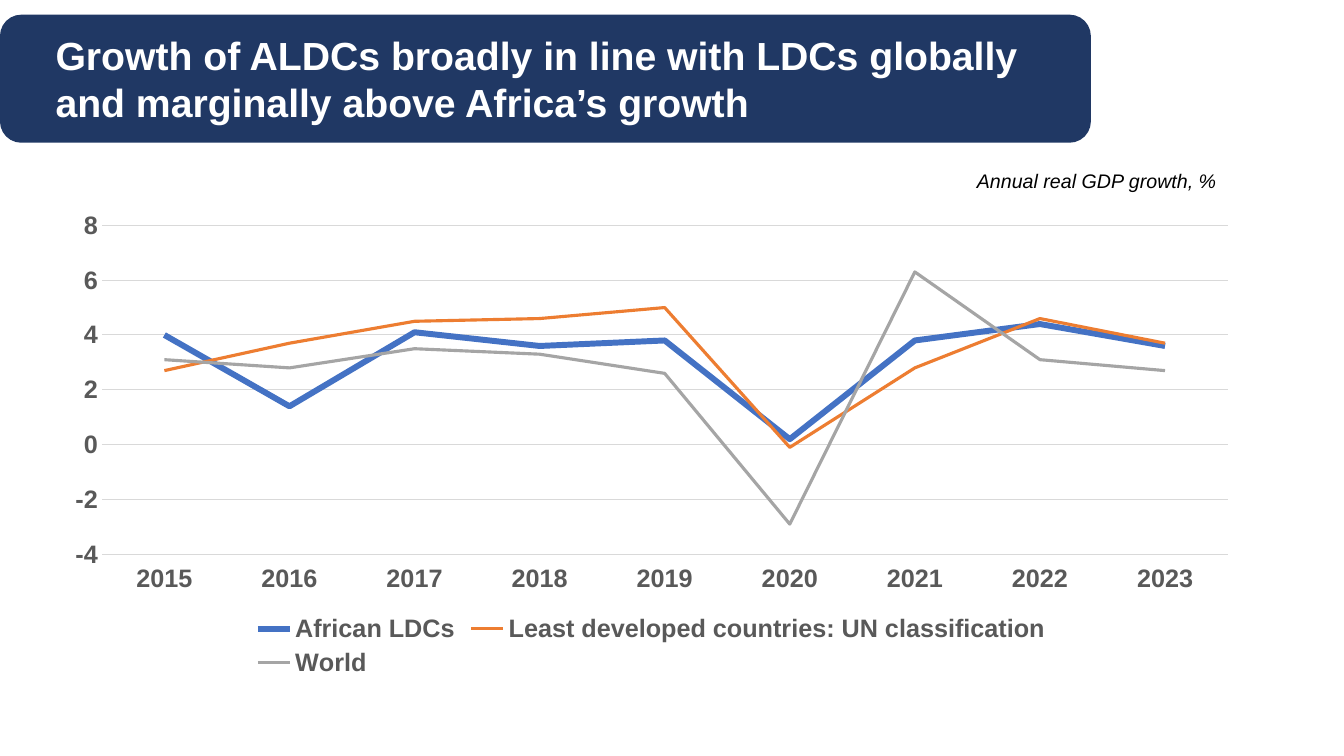
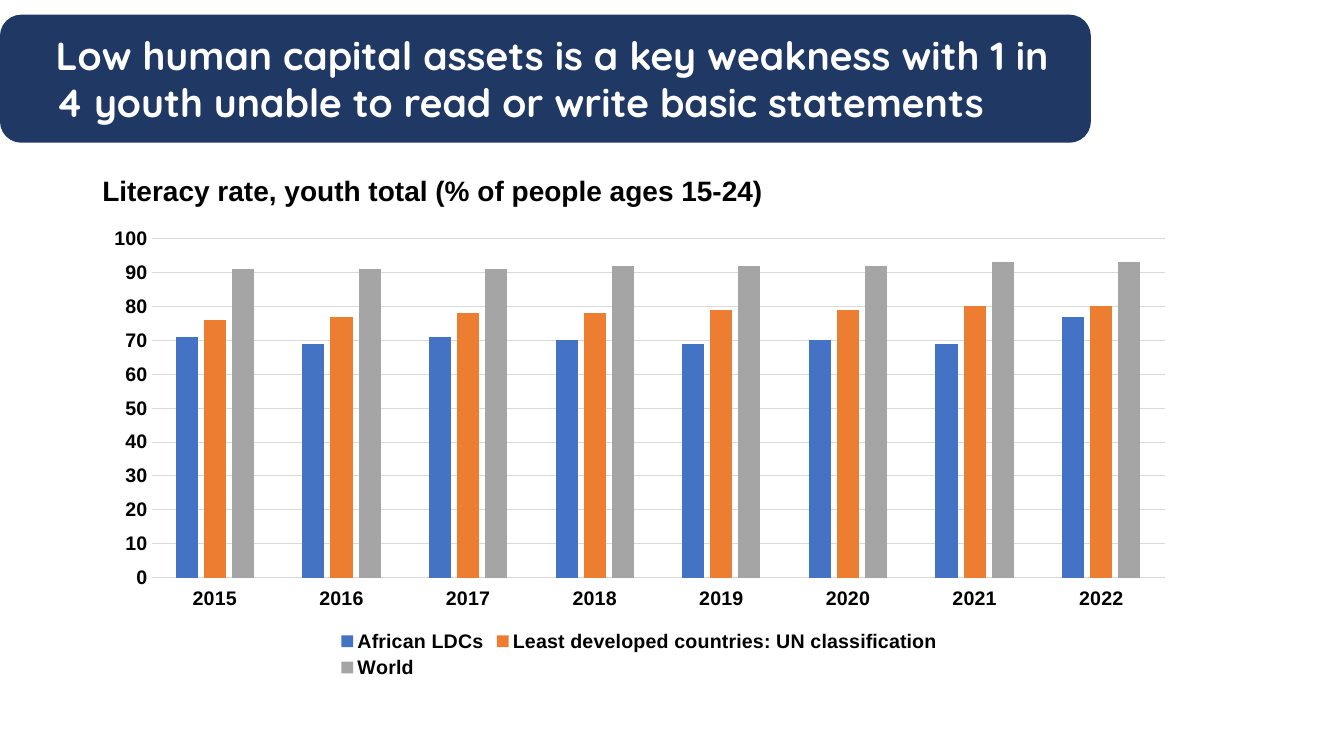
from dataclasses import dataclass

from pptx import Presentation
from pptx.chart.data import CategoryChartData
from pptx.dml.color import RGBColor
from pptx.enum.chart import XL_CHART_TYPE as ChartType
from pptx.enum.chart import XL_LEGEND_POSITION as LegendPosition
from pptx.enum.chart import XL_TICK_LABEL_POSITION as LabelPosition
from pptx.enum.chart import XL_TICK_MARK as TickMark
from pptx.enum.shapes import MSO_SHAPE as Shape
from pptx.enum.text import MSO_ANCHOR as Anchor
from pptx.enum.text import PP_ALIGN as Align
from pptx.util import Emu, Pt


@dataclass(frozen=True)
class Theme:
    navy: str = "203864"
    white: str = "FFFFFF"
    black: str = "000000"
    gray: str = "595959"
    grid: str = "D9D9D9"
    series: tuple = ("4472C4", "ED7D31", "A5A5A5")
    font: str = "Arial"
    accent_font: str = "Quicksand"
    title_size: int = 28
    heading_size: int = 20
    large_size: int = 18
    small_size: int = 14


THEME = Theme()
EMU_PER_PX = 9525
SLIDE_SIZE = (1280, 720)
BAND = (0, 14, 1039, 122)
GROUPS = ("African LDCs", "Least developed countries: UN classification", "World")


# Shared helpers
def px(*lengths):
    return [Emu(length * EMU_PER_PX) for length in lengths]


def color(code):
    return RGBColor.from_string(code)


def style_font(font, size, code, name=THEME.font, bold=False, italic=False):
    font.name, font.size = name, Pt(size)
    font.bold, font.italic = bold, italic
    font.color.rgb = color(code)


def write(frame, text, size, code, spacing=None, **style):
    frame.word_wrap = True
    para = frame.paragraphs[0]
    para.alignment = Align.LEFT
    para.line_spacing = spacing
    span = para.add_run()
    span.text = text
    style_font(span.font, size, code, **style)
    return para


# Text elements
def add_title_band(page, text, font=THEME.font):
    band = page.shapes.add_shape(Shape.ROUNDED_RECTANGLE, *px(*BAND))
    band.shadow.inherit = False
    band.fill.solid()
    band.fill.fore_color.rgb = color(THEME.navy)
    band.line.fill.background()
    frame = band.text_frame
    frame.vertical_anchor = Anchor.MIDDLE
    frame.margin_left, frame.margin_right, frame.margin_top, frame.margin_bottom = px(10, 10, 10, 10)
    para = write(frame, text, THEME.title_size, THEME.white, name=font, bold=True)
    # Both lines are indented from the edge of the band
    properties = para._p.get_or_add_pPr()
    properties.set("marL", str(px(37)[0]))
    properties.set("indent", "0")


def add_label(page, area, text, size, **style):
    box = page.shapes.add_textbox(*px(*area))
    write(box.text_frame, text, size, THEME.black, **style)


# Charts
def add_growth_axes(chart, scale, size, text_color):
    low, high, step = scale
    category, value = chart.category_axis, chart.value_axis
    value.minimum_scale, value.maximum_scale, value.major_unit = low, high, step
    value.has_major_gridlines = True
    value.format.line.fill.background()
    for line in (category.format.line, value.major_gridlines.format.line):
        line.color.rgb = color(THEME.grid)
        line.width = Pt(0.75)
    for axis in (category, value):
        axis.major_tick_mark = axis.minor_tick_mark = TickMark.NONE
        style_font(axis.tick_labels.font, size, text_color, bold=True)
    category.tick_label_position = LabelPosition.LOW


def add_group_chart(page, kind, area, years, values, scale, size, text_color, number_format="General"):
    data = CategoryChartData(number_format=number_format)
    data.categories = [str(year) for year in years]
    for group, numbers in zip(GROUPS, values):
        data.add_series(group, numbers)
    chart = page.shapes.add_chart(kind, *px(*area), data).chart
    chart.has_title = False
    style_font(chart.font, size, THEME.black, bold=True)
    add_growth_axes(chart, scale, size, text_color)
    chart.has_legend = True
    chart.legend.position = LegendPosition.BOTTOM
    chart.legend.include_in_layout = False
    style_font(chart.legend.font, size, text_color, bold=True)
    chart.plots[0].vary_by_categories = False
    return chart


def style_lines(chart, widths):
    for series, code, width in zip(chart.plots[0].series, THEME.series, widths):
        series.smooth = False
        series.format.line.color.rgb = color(code)
        series.format.line.width = Pt(width)


def style_columns(chart, gap, overlap):
    plot = chart.plots[0]
    plot.gap_width, plot.overlap = gap, overlap
    for series, code in zip(plot.series, THEME.series):
        series.format.fill.solid()
        series.format.fill.fore_color.rgb = color(code)


# Slides
def build_growth(page):
    add_title_band(page, "Growth of ALDCs broadly in line with LDCs globally and marginally above Africa’s growth")
    values = (
        (4, 1.4, 4.1, 3.6, 3.8, 0.2, 3.8, 4.4, 3.6),
        (2.7, 3.7, 4.5, 4.6, 5, -0.1, 2.8, 4.6, 3.7),
        (3.1, 2.8, 3.5, 3.3, 2.6, -2.9, 6.3, 3.1, 2.7),
    )
    chart = add_group_chart(page, ChartType.LINE, (49, 192, 1143, 457), range(2015, 2024), values,
                            scale=(-4, 8, 2), size=THEME.large_size, text_color=THEME.gray)
    style_lines(chart, widths=(4.25, 2.25, 2.25))
    add_label(page, (921, 156, 257, 33), "Annual real GDP growth, %", THEME.small_size, italic=True)


def build_literacy(page):
    add_title_band(page, "Low human capital assets is a key weakness with 1 in 4 youth unable to read or write "
                         "basic statements", font=THEME.accent_font)
    add_label(page, (88, 164, 811, 44), "Literacy rate, youth total (% of people ages 15-24)",
              THEME.heading_size, bold=True, spacing=0.9)
    values = (
        (71, 69, 71, 70, 69, 70, 69, 77),
        (76, 77, 78, 78, 79, 79, 80, 80),
        (91, 91, 91, 92, 92, 92, 93, 93),
    )
    chart = add_group_chart(page, ChartType.COLUMN_CLUSTERED, (88, 208, 1042, 442), range(2015, 2023), values,
                            scale=(0, 100, 10), size=THEME.small_size, text_color=THEME.black,
                            number_format="0")
    style_columns(chart, gap=219, overlap=-27)


def main():
    deck = Presentation()
    deck.slide_width, deck.slide_height = px(*SLIDE_SIZE)
    for build in (build_growth, build_literacy):
        build(deck.slides.add_slide(deck.slide_layouts[6]))
    deck.save("out.pptx")


if __name__ == "__main__":
    main()
